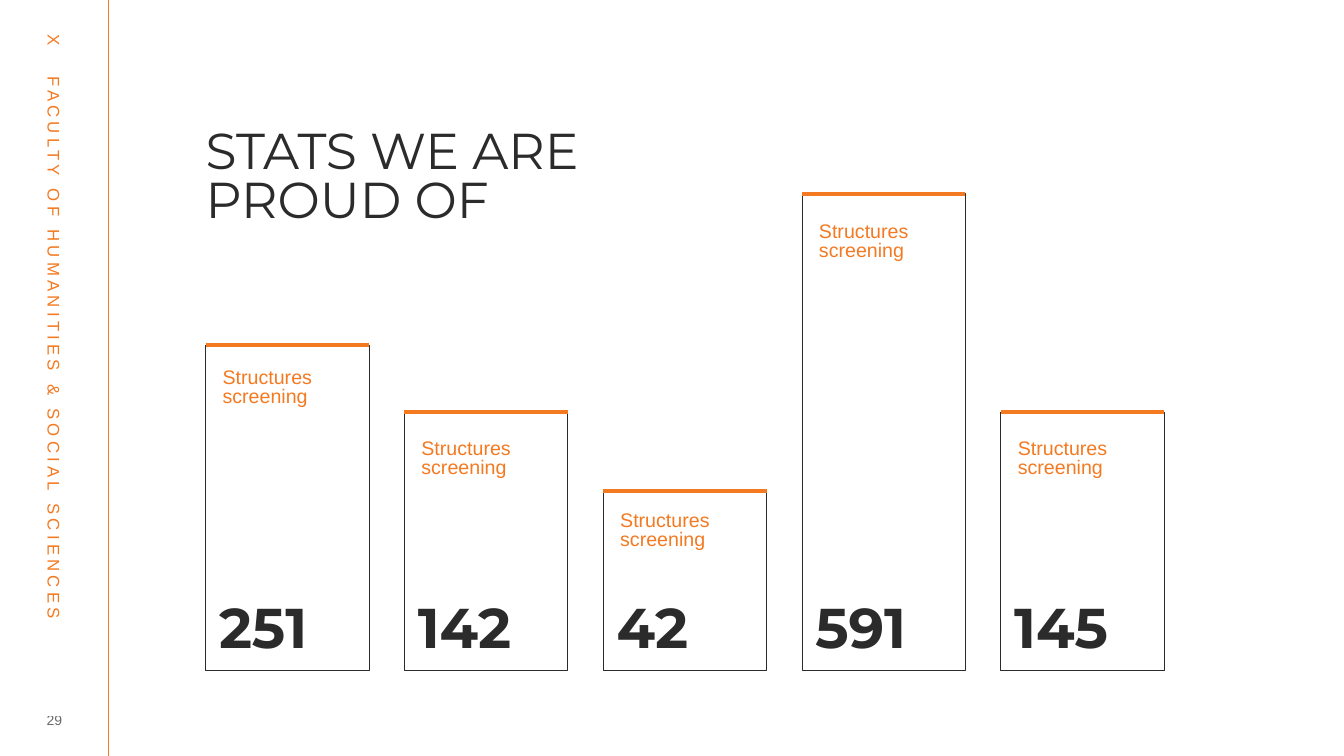
from lxml.etree import SubElement
from pptx import Presentation
from pptx.dml.color import RGBColor
from pptx.enum.shapes import MSO_CONNECTOR, MSO_SHAPE
from pptx.enum.text import MSO_ANCHOR, MSO_AUTO_SIZE, PP_ALIGN
from pptx.oxml.ns import qn
from pptx.util import Cm, Pt

ORANGE = RGBColor(0xF4, 0x7A, 0x21)
BAR_ORANGE = RGBColor(0xF3, 0x7A, 0x21)
CHARCOAL = RGBColor(0x2B, 0x2B, 0x2B)

LABEL_FONT = {"name": "Arial", "size": Pt(14)}
NUMBER_FONT = {"name": "Montserrat", "size": Pt(40), "bold": True}
TITLE_FONT = {"name": "Montserrat", "size": Pt(36)}
SIDEBAR_FONT = {"name": "Arial", "size": Pt(12)}
PAGE_FONT = {"name": "Arial", "size": Pt(10)}

NO_MARGINS = {"margin_left": 0, "margin_top": 0, "margin_right": 0, "margin_bottom": 0}

FIRST_LEFT = 5.18
COLUMN_STEP = 5.01
COLUMN_WIDTH = 4.12
BASELINE = 16.89
COLUMNS = [
    ("251", 8.7, 9.19),
    ("142", 10.39, 10.97),
    ("42", 12.37, 12.8),
    ("591", 4.88, 5.51),
    ("145", 10.39, 10.97),
]


def set_attributes(target, values):
    for name, value in values.items():
        setattr(target, name, value)


def format_paragraphs(text_frame, font, color, **paragraph_values):
    for paragraph in text_frame.paragraphs:
        set_attributes(paragraph, paragraph_values)
        for run in paragraph.runs:
            set_attributes(run.font, font)
            run.font.color.rgb = color


def add_text(slide, text, left, top, width, height):
    shape = slide.shapes.add_textbox(Cm(left), Cm(top), Cm(width), Cm(height))
    shape.text_frame.word_wrap = True
    shape.text_frame.text = text
    return shape


def add_line(slide, start, end, color, weight):
    connector = slide.shapes.add_connector(
        MSO_CONNECTOR.STRAIGHT, *(Cm(length) for length in start + end)
    )
    connector.line.color.rgb = color
    connector.line.width = Pt(weight)
    SubElement(connector._element.spPr, qn("a:effectLst"))


def add_sidebar(slide):
    add_line(slide, (2.74, 0), (2.74, 19.05), ORANGE, 0.5)
    shape = add_text(
        slide, "X\tFACULTY OF HUMANITIES & SOCIAL SCIENCES", -6.91, 8.53, 16.56, 0.76
    )
    shape.rotation = 90
    paragraph = shape.text_frame.paragraphs[0]
    tabs = SubElement(paragraph._p.get_or_add_pPr(), qn("a:tabLst"))
    SubElement(tabs, qn("a:tab"), pos=str(Cm(1.05)), algn="l")
    format_paragraphs(shape.text_frame, SIDEBAR_FONT, ORANGE)
    for run in paragraph.runs:
        run._r.get_or_add_rPr().set("spc", "300")


def add_page_number(slide):
    shape = add_text(slide, "29", 0.66, 17.83, 1.42, 0.64)
    text_frame = shape.text_frame
    set_attributes(text_frame, {**NO_MARGINS, "vertical_anchor": MSO_ANCHOR.MIDDLE})
    format_paragraphs(text_frame, PAGE_FONT, CHARCOAL, alignment=PP_ALIGN.CENTER)
    for color in shape._element.iter(qn("a:srgbClr")):
        SubElement(color, qn("a:alpha"), val="70000")


def set_title(slide):
    title = slide.shapes.title
    set_attributes(
        title,
        {"left": Cm(5.18), "top": Cm(2.77), "width": Cm(11.73), "height": Cm(4.5)},
    )
    text_frame = title.text_frame
    text_frame.text = "STATS WE ARE\vPROUD OF"
    set_attributes(
        text_frame,
        {
            **NO_MARGINS,
            "margin_top": Cm(0.53),
            "vertical_anchor": MSO_ANCHOR.TOP,
            "auto_size": MSO_AUTO_SIZE.NONE,
            "word_wrap": True,
        },
    )
    format_paragraphs(
        text_frame, TITLE_FONT, CHARCOAL, alignment=PP_ALIGN.LEFT, line_spacing=0.8
    )


def add_column(slide, left, number, top, label_top):
    shape = slide.shapes.add_shape(
        MSO_SHAPE.RECTANGLE, Cm(left), Cm(top), Cm(COLUMN_WIDTH), Cm(BASELINE - top)
    )
    shape.shadow.inherit = False
    shape.fill.background()
    shape.line.color.rgb = CHARCOAL
    shape.line.width = Pt(0.5)
    add_line(slide, (left, top), (left + COLUMN_WIDTH, top), BAR_ORANGE, 3)

    label = add_text(slide, "Structures\nscreening", left + 0.18, label_top, 3.94, 2.36)
    format_paragraphs(label.text_frame, LABEL_FONT, ORANGE, line_spacing=0.8)

    value = add_text(slide, number, left + 0.09, 15.14, 4.04, 1.42)
    format_paragraphs(value.text_frame, NUMBER_FONT, CHARCOAL, line_spacing=0.8)


def main():
    presentation = Presentation()
    presentation.slide_width = Cm(33.87)
    presentation.slide_height = Cm(19.05)
    slide = presentation.slides.add_slide(presentation.slide_layouts[5])
    add_sidebar(slide)
    add_page_number(slide)
    set_title(slide)
    for index, column in enumerate(COLUMNS):
        add_column(slide, FIRST_LEFT + index * COLUMN_STEP, *column)
    presentation.save("out.pptx")


if __name__ == "__main__":
    main()
